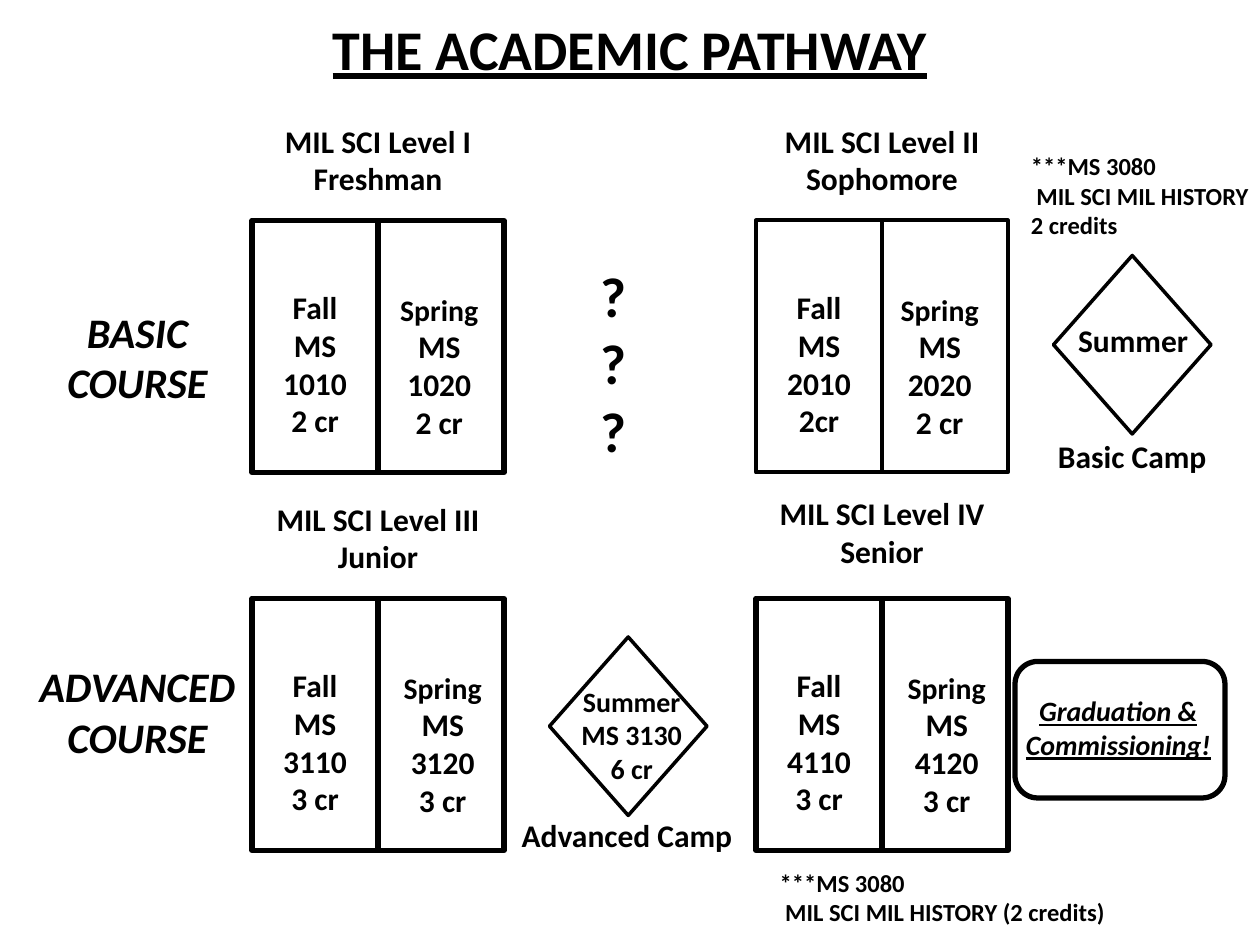
"""Build the academic pathway slide: four course years, two camps and commissioning."""
from pptx import Presentation
from pptx.dml.color import RGBColor
from pptx.enum.shapes import MSO_CONNECTOR, MSO_SHAPE
from pptx.enum.text import MSO_ANCHOR, MSO_AUTO_SIZE, PP_ALIGN
from pptx.oxml.ns import qn
from pptx.util import Pt

LEFT, CENTER = PP_ALIGN.LEFT, PP_ALIGN.CENTER
TOP, NO_AUTOSIZE = MSO_ANCHOR.TOP, MSO_AUTO_SIZE.NONE
RECTANGLE, DIAMOND, ROUNDED = MSO_SHAPE.RECTANGLE, MSO_SHAPE.DIAMOND, MSO_SHAPE.ROUNDED_RECTANGLE
STRAIGHT = MSO_CONNECTOR.STRAIGHT

THEME = {
    "font": "Calibri", "ink": RGBColor(0, 0, 0),
    "title": 32, "course": 24, "body": 18, "spring": 17, "small": 16, "note": 14,
}

TITLE = "THE ACADEMIC PATHWAY"
YEAR_SIZE = 144
YEAR_LEFTS, YEAR_TOPS = (144, 432), (126, 342)
YEARS = [
    {"column": 0, "row": 0, "heading": ["MIL SCI Level I", "Freshman"], "rise": 60, "line": 3,
     "fall": ["Fall", "MS 1010", "2 cr"], "spring": ["Spring", "MS 1020", "2 cr"], "shift": 2},
    {"column": 1, "row": 0, "heading": ["MIL SCI Level II", "Sophomore"], "rise": 60, "line": 2.25,
     "fall": ["Fall", "MS 2010", "2cr"], "spring": ["Spring", "MS 2020", "2 cr"], "shift": 0},
    {"column": 0, "row": 1, "heading": ["MIL SCI Level III", "Junior"], "rise": 60, "line": 3,
     "fall": ["Fall", "MS 3110", "3 cr"], "spring": ["Spring", "MS 3120", "3 cr"], "shift": 4},
    {"column": 1, "row": 1, "heading": ["MIL SCI Level IV", "Senior"], "rise": 63, "line": 3,
     "fall": ["Fall", "MS 4110", "3 cr"], "spring": ["Spring", "MS 4120", "3 cr"], "shift": 4},
]

OUTLINES = [
    (DIAMOND, (314, 364, 90, 102), 2),
    (DIAMOND, (602, 146, 90, 102), 2),
    (ROUNDED, (580, 378, 120, 78), 3),
]

LABELS = [
    (["BASIC", "COURSE"], (13, 171.5, 131, 66), "course", CENTER, "i"),
    (["ADVANCED", "COURSE"], (13, 374, 131, 66), "course", CENTER, "i"),
    (["Summer"], (608.5, 180, 78, 29), "body", CENTER, ""),
    (["Summer", "MS 3130", "6 cr"], (322, 387.5, 78, 66), "small", CENTER, ""),
    (["Basic Camp"], (581, 246, 132, 29), "body", CENTER, ""),
    (["Advanced Camp"], (291, 463, 138, 29), "body", LEFT, ""),
    (["***MS 3080", " MIL SCI MIL HISTORY", "2 credits"], (582, 83, 172, 58), "note", LEFT, ""),
    (["***MS 3080", " MIL SCI MIL HISTORY (2 credits)"], (438.5, 492.5, 222, 41), "note", LEFT, ""),
    (["Graduation &", "Commissioning!"], (576, 393, 126, 46), "small", CENTER, "iu"),
    (["???"], (336, 146, 42, 124), "title", LEFT, ""),
]


def write(shape, lines, sizes, align=CENTER, style=""):
    frame = shape.text_frame
    frame.word_wrap = True
    frame.auto_size = NO_AUTOSIZE
    frame.vertical_anchor = TOP
    for index, (line, size) in enumerate(zip(lines, sizes)):
        paragraph = frame.paragraphs[0] if index == 0 else frame.add_paragraph()
        paragraph.alignment = align
        run = paragraph.add_run()
        run.text = line
        font = run.font
        font.name, font.size, font.bold = THEME["font"], Pt(THEME[size]), True
        font.italic, font.underline = "i" in style, "u" in style
        font.color.rgb = THEME["ink"]


def add_label(slide, lines, box, sizes, align=CENTER, style=""):
    write(slide.shapes.add_textbox(*map(Pt, box)), lines, sizes, align, style)


def set_line(line, width):
    line.color.rgb = THEME["ink"]
    line.width = Pt(width)


def add_outline(slide, kind, box, width):
    shape = slide.shapes.add_shape(kind, *map(Pt, box))
    shape.shadow.inherit = False
    shape.fill.background()
    set_line(shape.line, width)


def add_year(slide, year):
    left, top = YEAR_LEFTS[year["column"]], YEAR_TOPS[year["row"]]
    middle = left + YEAR_SIZE / 2
    add_outline(slide, RECTANGLE, (left, top, YEAR_SIZE, YEAR_SIZE), year["line"])
    divider = slide.shapes.add_connector(
        STRAIGHT, Pt(middle), Pt(top), Pt(middle), Pt(top + YEAR_SIZE))
    set_line(divider.line, year["line"])
    properties = divider.element.spPr
    properties.append(properties.makeelement(qn("a:effectLst"), {}))
    add_label(slide, year["heading"], (left + 6, top - year["rise"], 132, 51), ["body"] * 2)
    add_label(slide, year["fall"], (left + 6, top + 35, 60, 94), ["body"] * 3)
    add_label(slide, year["spring"], (middle + year["shift"], top + 37, 66, 94),
              ["spring", "body", "body"])


def main():
    presentation = Presentation()
    presentation.slide_width, presentation.slide_height = Pt(720), Pt(540)
    slide = presentation.slides.add_slide(presentation.slide_layouts[5])
    title = slide.shapes.title
    title.left, title.top, title.width, title.height = map(Pt, (96, 4.5, 528, 46))
    write(title, [TITLE], ["title"], style="u")
    for year in YEARS:
        add_year(slide, year)
    for kind, box, width in OUTLINES:
        add_outline(slide, kind, box, width)
    for lines, box, size, align, style in LABELS:
        add_label(slide, lines, box, [size] * len(lines), align, style)
    presentation.save("out.pptx")


if __name__ == "__main__":
    main()
